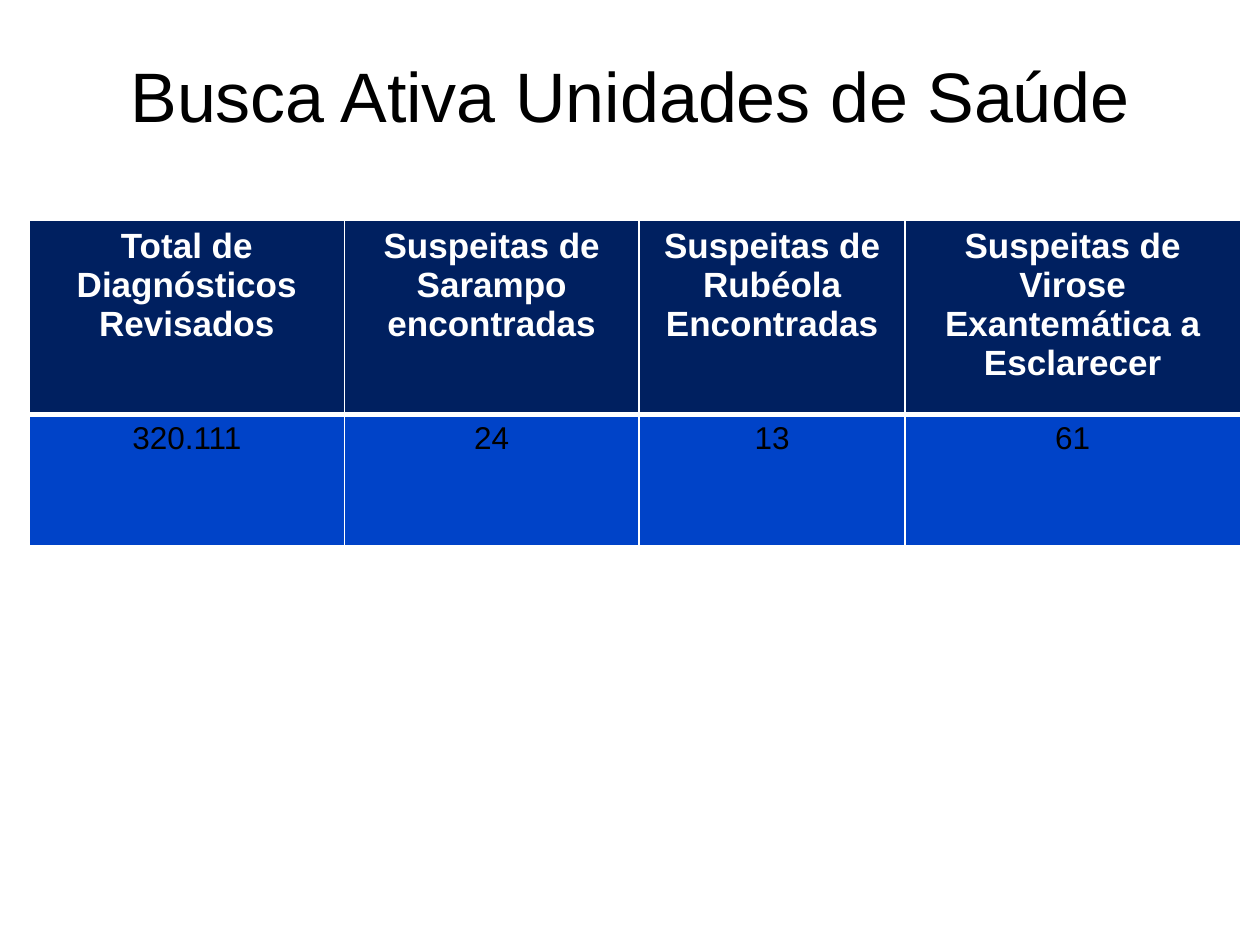
from dataclasses import dataclass

from lxml.etree import SubElement
from pptx import Presentation
from pptx.dml.color import RGBColor as RGB
from pptx.enum.text import MSO_ANCHOR as Anchor, PP_ALIGN as Align
from pptx.oxml.ns import qn
from pptx.util import Pt

COLORS = {"header": "002060", "body": "0043C8", "white": "FFFFFF", "black": "000000"}
COL_WIDTHS = (180, 168.5, 152, 191.5)


@dataclass(frozen=True)
class RowSpec:
    texts: tuple[str, ...]
    height: float
    fill: str
    color: str
    size: float
    bold: bool
    top: float
    bottom: float


ROWS = (
    RowSpec(("Total de Diagnósticos Revisados", "Suspeitas de Sarampo encontradas",
             "Suspeitas de Rubéola Encontradas",
             "Suspeitas de Virose Exantemática a Esclarecer"),
            111, "header", "white", 20, True, top=1, bottom=3),
    RowSpec(("320.111", "24", "13", "61"),
            75, "body", "black", 18, False, top=3, bottom=1),
)


def write(tf, text: str, color: str, size: float, bold: bool = False) -> None:
    """Put one centred run into a text frame."""
    p = tf.paragraphs[0]
    p.alignment = Align.CENTER
    r = p.add_run()
    r.text = text
    for name, value in {"name": "Arial", "size": Pt(size), "bold": bold}.items():
        setattr(r.font, name, value)
    r.font.color.rgb = RGB.from_string(COLORS[color])


def add_borders(cell, widths: dict[str, float]) -> None:
    """Draw white cell borders, in the order left, right, top, bottom."""
    tc_pr = cell._tc.get_or_add_tcPr()
    for side, width in widths.items():
        ln = SubElement(tc_pr, qn(f"a:ln{side}"), w=str(Pt(width)))
        fill = SubElement(ln, qn("a:solidFill"))
        SubElement(fill, qn("a:srgbClr"), val=COLORS["white"])


def fill_row(table, index: int, row: RowSpec) -> None:
    table.rows[index].height = Pt(row.height)
    for cell, text in zip(table.rows[index].cells, row.texts):
        add_borders(cell, {"L": 1, "R": 1, "T": row.top, "B": row.bottom})
        cell.fill.solid()
        cell.fill.fore_color.rgb = RGB.from_string(COLORS[row.fill])
        write(cell.text_frame, text, row.color, row.size, row.bold)


prs = Presentation()
prs.slide_width, prs.slide_height = Pt(720), Pt(540)
s = prs.slides.add_slide(prs.slide_layouts[6])

# Title
tf = s.shapes.add_textbox(Pt(36), Pt(21.6), Pt(648), Pt(90)).text_frame
for name, value in {"word_wrap": True, "vertical_anchor": Anchor.TOP,
                    "margin_top": Pt(8.5)}.items():
    setattr(tf, name, value)
write(tf, "Busca Ativa Unidades de Saúde", "black", 40)

# Table of reviewed diagnoses and suspected cases
table = s.shapes.add_table(len(ROWS), len(COL_WIDTHS), Pt(16.75), Pt(126),
                           Pt(sum(COL_WIDTHS)), Pt(sum(r.height for r in ROWS))).table
for column, width in zip(table.columns, COL_WIDTHS):
    column.width = Pt(width)
for i, row in enumerate(ROWS):
    fill_row(table, i, row)

prs.save("out.pptx")
